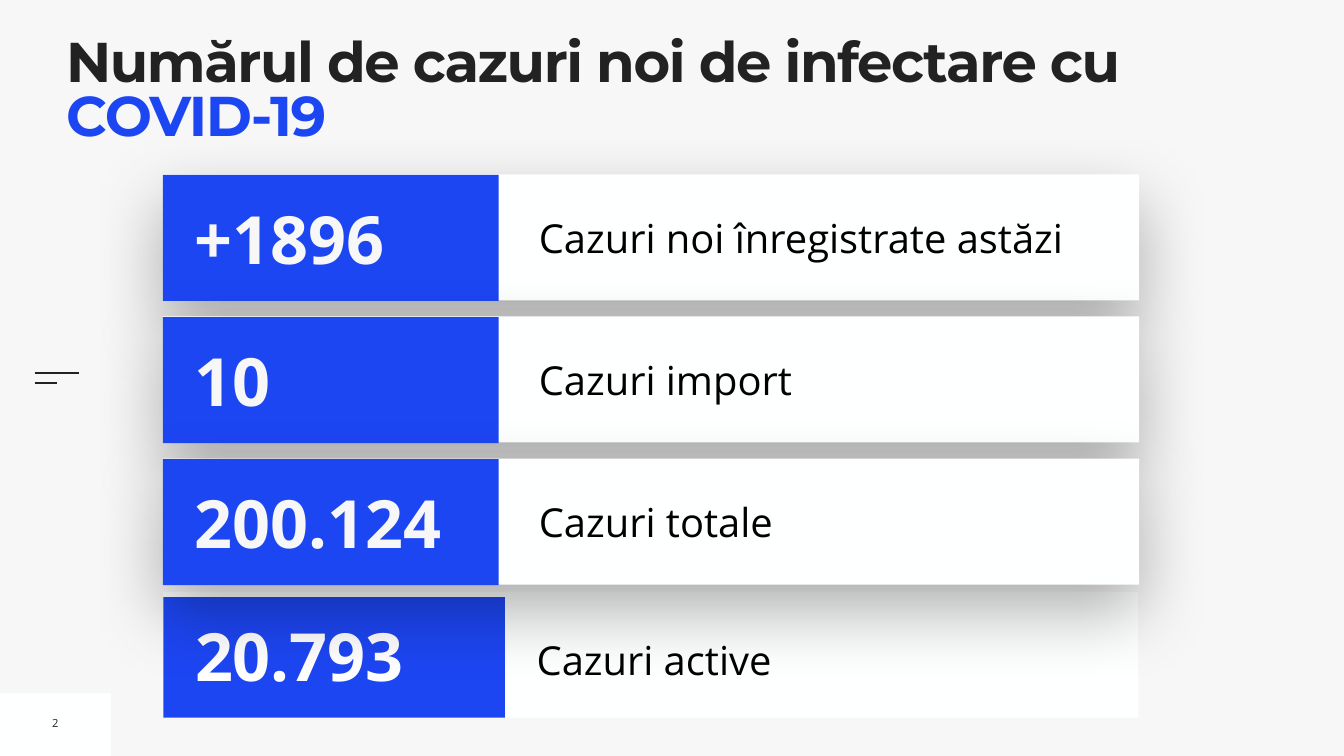
from lxml import etree
from pptx import Presentation
from pptx import util as u
from pptx.dml.color import RGBColor
from pptx.enum import shapes, text
from pptx.oxml import parse_xml
from pptx.oxml.ns import nsdecls, qn

PAPER = RGBColor(0xF7, 0xF7, 0xF7)
CARD = RGBColor(0xFE, 0xFF, 0xFF)
WHITE = RGBColor(0xFF, 0xFF, 0xFF)
BLUE = RGBColor(0x1D, 0x46, 0xF3)
INK = RGBColor(0x22, 0x22, 0x22)
BLACK = RGBColor(0x00, 0x00, 0x00)

SHADOW = f"""<a:effectLst {nsdecls('a')}>
  <a:outerShdw blurRad="{u.Pt(100)}" dist="{u.Pt(40)}" dir="5400000" rotWithShape="0">
    <a:srgbClr val="000000"><a:alpha val="30000"/></a:srgbClr>
  </a:outerShdw>
</a:effectLst>"""

deck = Presentation()
deck.slide_width, deck.slide_height = u.Cm(67.74), u.Cm(38.1)
page = deck.slides.add_slide(deck.slide_layouts[6])
page.background.fill.solid()
page.background.fill.fore_color.rgb = PAPER


def add_panel(place, colour, shadow=False):
    panel = page.shapes.add_shape(shapes.MSO_SHAPE.RECTANGLE, *map(u.Cm, place))
    panel.fill.solid()
    panel.fill.fore_color.rgb = colour
    panel.line.fill.background()
    panel.shadow.inherit = False
    if shadow:
        effects = panel._element.spPr.find(qn("a:effectLst"))
        effects.getparent().replace(effects, parse_xml(SHADOW))


def add_text(place, spans, size, font="Open Sans", bold=False, inset=0.25,
             anchor=text.MSO_ANCHOR.MIDDLE, wrap=True, **layout):
    box = page.shapes.add_textbox(*map(u.Cm, place))
    frame = box.text_frame
    frame_format = {"word_wrap": wrap, "vertical_anchor": anchor}
    for side in ("left", "top", "right", "bottom"):
        frame_format[f"margin_{side}"] = u.Cm(inset)
    for name, value in frame_format.items():
        setattr(frame, name, value)
    para = frame.paragraphs[0]
    for name, value in layout.items():
        setattr(para, name, value)
    for words, colour in spans:
        span = para.add_run()
        span.text = words
        for name, value in {"size": u.Pt(size), "name": font, "bold": bold}.items():
            setattr(span.font, name, value)
        span.font.color.rgb = colour
    return para


# Page number corner
add_panel((0, 34.95, 5.59, 3.15), CARD)
add_text((2.36, 35.79, 0.86, 1.3), [("2", INK)], 16, wrap=False,
         alignment=text.PP_ALIGN.CENTER)

# Two short dashes at the left edge
for y, right in ((18.82, 3.99), (19.28, 2.87)):
    dash = page.shapes.add_connector(shapes.MSO_CONNECTOR.STRAIGHT,
                                     u.Cm(1.75), u.Cm(y), u.Cm(right), u.Cm(y))
    dash.line.color.rgb = INK
    dash.line.width = u.Pt(3)
    etree.SubElement(dash._element.spPr, qn("a:effectLst"))

# Title, with tightened letters
title = add_text((3.33, 1.98, 60.81, 4.01),
                 [("Numărul de cazuri noi de infectare cu ", INK), ("COVID-19", BLUE)],
                 80, "Montserrat", True, inset=0,
                 anchor=text.MSO_ANCHOR.TOP, line_spacing=0.8)
for span in title.runs:
    span.font._element.set("spc", "-200")

# Active cases: flat row, behind the shadows of the others
add_panel((8.23, 29.82, 49.15, 6.35), CARD)
add_text((27.05, 31.29, 29.41, 3.18), [("Cazuri active", BLACK)], 57, inset=0,
         line_spacing=1.3, space_before=u.Pt(20))
add_panel((8.23, 30.1, 17.22, 6.07), BLUE)
add_text((9.58, 30.71, 15.32, 4.57), [("20.793", WHITE)], 95, bold=True)

# Raised rows at an even pitch
ROWS = [("+1896", "Cazuri noi înregistrate astăzi"),
        ("10", "Cazuri import"),
        ("200.124", "Cazuri totale")]
for index, (number, label) in enumerate(ROWS):
    top = 8.79 + index * 7.16
    add_panel((8.21, top, 49.2, 6.35), CARD, shadow=True)
    add_text((26.91, top + 1.7, 29.87, 2.95), [(label, BLACK)], 57)
    add_panel((8.21, top + 0.03, 16.92, 6.35), BLUE)
    add_text((9.56, top + 0.89, 15.32, 4.57), [(number, PAPER)], 95, bold=True)

deck.save("out.pptx")
